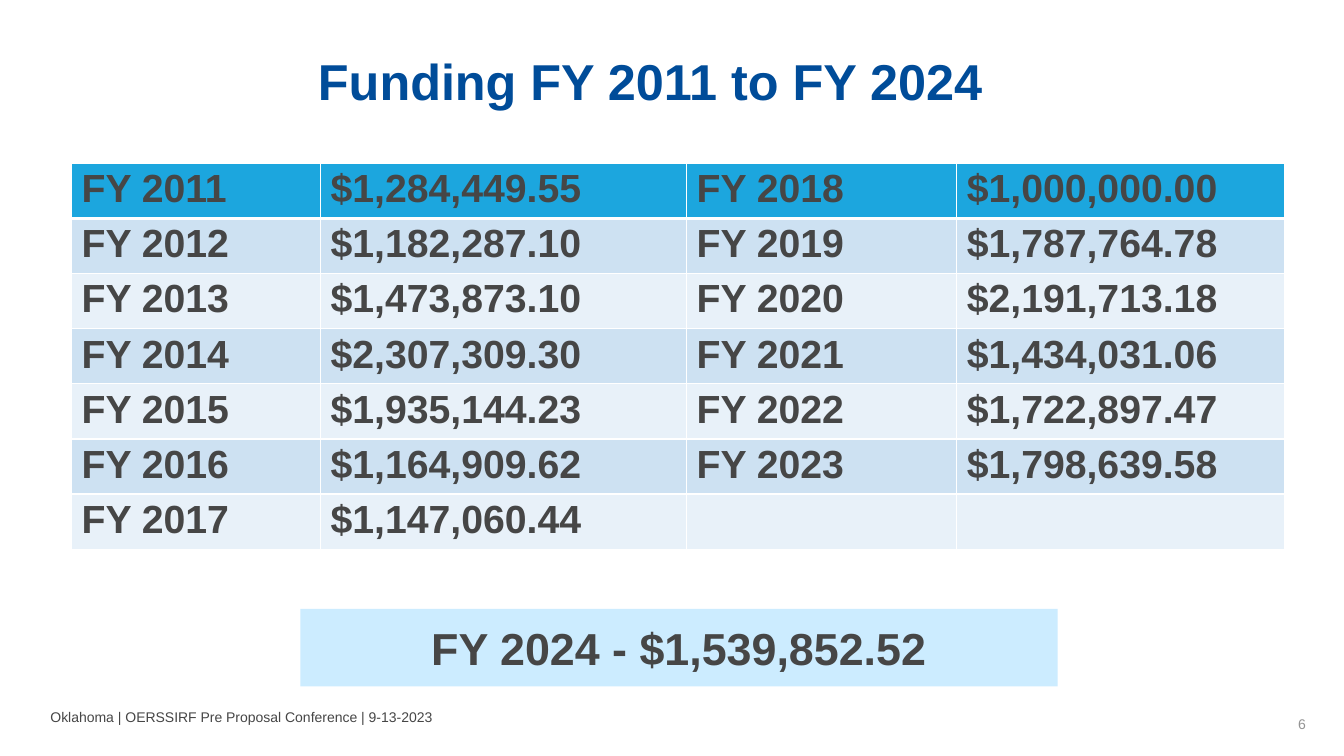
from lxml import etree
from pptx import Presentation
from pptx.dml.color import RGBColor
from pptx.enum.shapes import MSO_SHAPE
from pptx.enum.text import MSO_ANCHOR, PP_ALIGN
from pptx.oxml.ns import qn
from pptx.util import Pt

PX = 9144  # one hundredth of an inch in EMU
LEFT, CENTER, RIGHT = PP_ALIGN.LEFT, PP_ALIGN.CENTER, PP_ALIGN.RIGHT
TOP, MIDDLE = MSO_ANCHOR.TOP, MSO_ANCHOR.MIDDLE
RECTANGLE = MSO_SHAPE.RECTANGLE

NAVY = RGBColor(0x00, 0x4C, 0x99)
CHARCOAL = RGBColor(0x46, 0x46, 0x46)
GRAY = RGBColor(0x94, 0x94, 0x94)
HEADER_BLUE = RGBColor(0x1C, 0xA6, 0xDE)
BAND_DARK = RGBColor(0xCD, 0xE1, 0xF2)
BAND_LIGHT = RGBColor(0xE8, 0xF1, 0xF9)
CALLOUT_BLUE = RGBColor(0xCC, 0xEC, 0xFF)

FUNDING = [
    ("FY 2011", "$1,284,449.55", "FY 2018", "$1,000,000.00"),
    ("FY 2012", "$1,182,287.10", "FY 2019", "$1,787,764.78"),
    ("FY 2013", "$1,473,873.10", "FY 2020", "$2,191,713.18"),
    ("FY 2014", "$2,307,309.30", "FY 2021", "$1,434,031.06"),
    ("FY 2015", "$1,935,144.23", "FY 2022", "$1,722,897.47"),
    ("FY 2016", "$1,164,909.62", "FY 2023", "$1,798,639.58"),
    ("FY 2017", "$1,147,060.44", "", ""),
]
COLUMN_WIDTHS = [247, 363, 268, 325]
TABLE_HEIGHT = 373


def write(frame, text, size, color, bold=False, align=LEFT):
    para = frame.paragraphs[0]
    para.alignment = align
    span = para.add_run()
    span.text = text
    span.font.name = "Arial"
    span.font.size = Pt(size)
    span.font.bold = bold
    span.font.color.rgb = color


def add_white_borders(cell, bottom_width):
    """Insert the four cell borders ahead of the fill, as the schema requires."""
    properties = cell._tc.get_or_add_tcPr()
    widths = {"a:lnL": 1, "a:lnR": 1, "a:lnT": 1, "a:lnB": bottom_width}
    for index, (side, width) in enumerate(widths.items()):
        line = etree.Element(qn(side), w=str(Pt(width)))
        fill = etree.SubElement(line, qn("a:solidFill"))
        etree.SubElement(fill, qn("a:srgbClr"), val="FFFFFF")
        properties.insert(index, line)


deck = Presentation()
deck.slide_width, deck.slide_height = 1333 * PX, 750 * PX
page = deck.slides.add_slide(deck.slide_layouts[6])

# Title, footer and page number
LABELS = [
    ((50, 45, 1214, 92), "Funding FY 2011 to FY 2024 ", 36, NAVY, True, CENTER, 0, TOP),
    ((50, 698, 925, 22), "Oklahoma | OERSSIRF Pre Proposal Conference | 9-13-2023",
     10, CHARCOAL, False, LEFT, 0, TOP),
    ((1005, 707, 300, 22), "6", 10, GRAY, False, RIGHT, 10, MIDDLE),
]
for place, text, size, color, bold, align, left_inset, anchor in LABELS:
    box = page.shapes.add_textbox(*(length * PX for length in place))
    frame = box.text_frame
    frame.word_wrap = True
    frame.margin_left = left_inset * PX
    frame.vertical_anchor = anchor
    write(frame, text, size, color, bold, align)

# Funding table
table = page.shapes.add_table(
    len(FUNDING), len(COLUMN_WIDTHS), 71 * PX, 162 * PX,
    sum(COLUMN_WIDTHS) * PX, TABLE_HEIGHT * PX).table
table.first_row = False
table.horz_banding = False
for column, width in zip(table.columns, COLUMN_WIDTHS):
    column.width = width * PX
for row_index, values in enumerate(FUNDING):
    table.rows[row_index].height = TABLE_HEIGHT * PX // len(FUNDING)
    is_header = row_index == 0
    band = HEADER_BLUE if is_header else (BAND_LIGHT, BAND_DARK)[row_index % 2]
    for column_index, value in enumerate(values):
        cell = table.cell(row_index, column_index)
        cell.margin_top = cell.margin_bottom = 4 * PX
        cell.fill.solid()
        cell.fill.fore_color.rgb = band
        add_white_borders(cell, 3 if is_header else 1)
        if value:
            write(cell.text_frame, value, 28, CHARCOAL, True)

# Current year callout
callout = page.shapes.add_shape(RECTANGLE, 298 * PX, 604 * PX, 751 * PX, 77 * PX)
callout.shadow.inherit = False
callout.fill.solid()
callout.fill.fore_color.rgb = CALLOUT_BLUE
callout.line.fill.background()
callout.text_frame.word_wrap = True
callout.text_frame.vertical_anchor = MIDDLE
write(callout.text_frame, "FY 2024 - $1,539,852.52", 32, CHARCOAL, True, CENTER)

deck.save("out.pptx")
